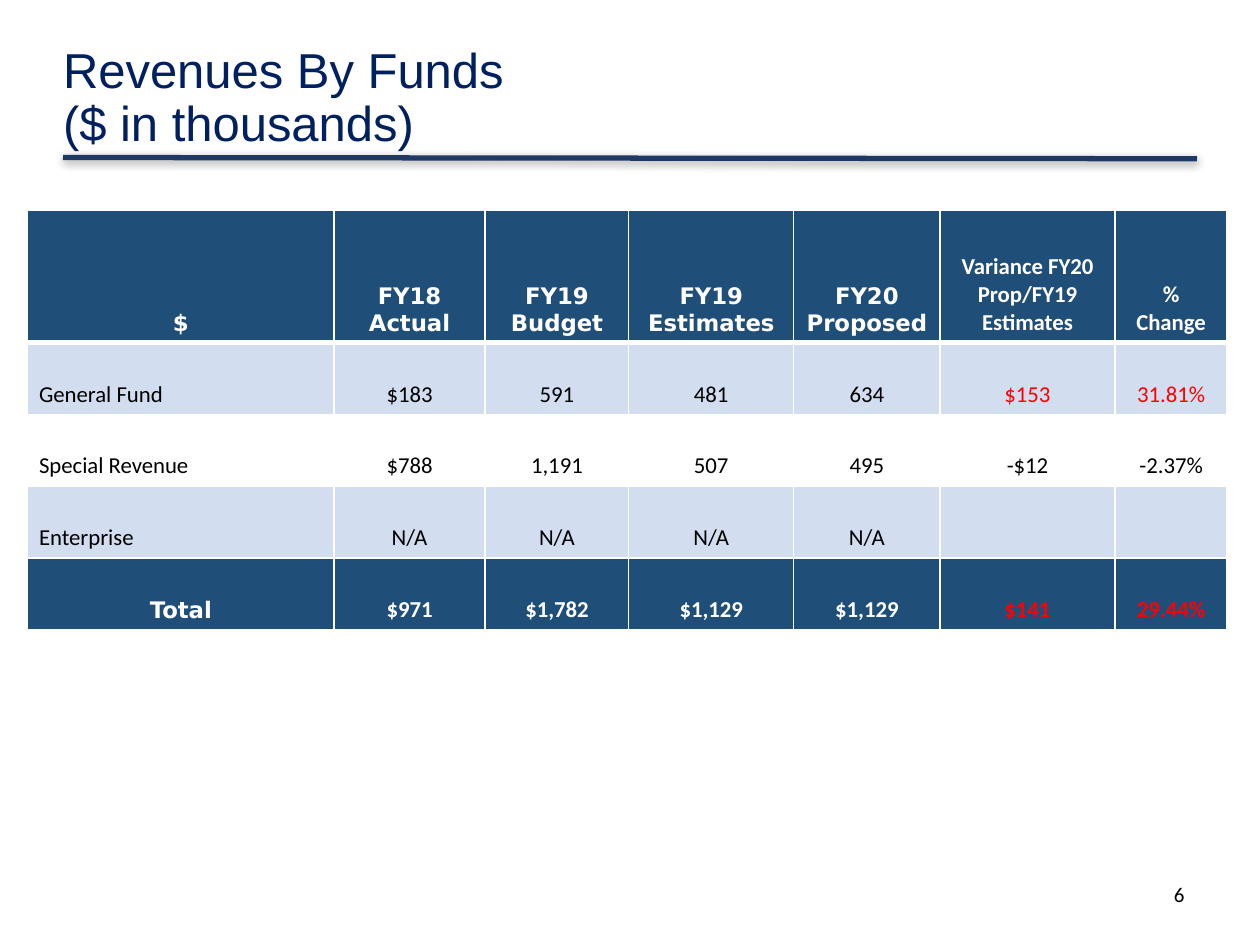
"""Build the slide of revenues by funds."""
from lxml import etree
from pptx import Presentation
from pptx.dml.color import RGBColor
from pptx.enum.shapes import MSO_CONNECTOR
from pptx.enum.text import MSO_ANCHOR, PP_ALIGN
from pptx.oxml import parse_xml
from pptx.oxml.ns import nsdecls, qn
from pptx.util import Inches, Pt

LEFT, CENTER, RIGHT = PP_ALIGN.LEFT, PP_ALIGN.CENTER, PP_ALIGN.RIGHT
MIDDLE, BOTTOM = MSO_ANCHOR.MIDDLE, MSO_ANCHOR.BOTTOM
STRAIGHT = MSO_CONNECTOR.STRAIGHT

COLORS = {"title": "002060", "rule": "203864", "dark": "1F4E79", "pale": "D2DEEF",
          "white": "FFFFFF", "black": "000000", "red": "FF0000"}
SANS, WIDE = "Calibri", "DejaVu Sans"

TITLE = ["Revenues By Funds", "($ in thousands)"]
PAGE = "6"
ROWS = [
    ["$", "FY18\nActual", "FY19\nBudget", "FY19\nEstimates", "FY20\nProposed",
     "Variance FY20 Prop/FY19 Estimates", "%\nChange"],
    ["General Fund", "$183", "591", "481", "634", "$153", "31.81%"],
    ["Special Revenue", "$788", "1,191", "507", "495", "-$12", "-2.37%"],
    ["Enterprise", "N/A", "N/A", "N/A", "N/A", "", ""],
    ["Total", "$971", "$1,782", "$1,129", "$1,129", "$141", "29.44%"],
]
WIDTHS = [2.43, 1.2, 1.14, 1.31, 1.16, 1.39, 0.89]
HEIGHTS = [1.05] + [0.57] * 4
FILLS = ["dark", "pale", None, "pale", "dark"]
LAST = len(ROWS) - 1
RED_ROWS, RED_COLS = (1, LAST), (5, 6)


def tint(name):
    return RGBColor.from_string(COLORS[name])


def add_run(para, text, size, face, color, bold=False):
    run = para.add_run()
    run.text = text
    font = run.font
    font.size, font.name, font.bold = Pt(size), face, bold
    font.color.rgb = tint(color)


def add_edge(cell, side, width):
    cell._tc.get_or_add_tcPr().append(parse_xml(
        f'<a:ln{side} {nsdecls("a")} w="{Pt(width)}"><a:solidFill>'
        f'<a:srgbClr val="{COLORS["white"]}"/></a:solidFill></a:ln{side}>'))


def style_cell(cell, row, col):
    cell.vertical_anchor = BOTTOM
    cell.margin_left = cell.margin_right = Inches(0.09)
    edges = {"L": 1, "R": 1, "T": 3 if row == 1 else 1, "B": 3 if row == 0 else 1}
    for side, width in edges.items():
        add_edge(cell, side, width)
    if FILLS[row]:
        cell.fill.solid()
        cell.fill.fore_color.rgb = tint(FILLS[row])
    else:
        cell.fill.background()


def fill_cell(cell, text, row, col):
    bold = row in (0, LAST)
    color = "white" if bold else "black"
    if row in RED_ROWS and col in RED_COLS:
        color = "red"
    wide = (row == 0 and col < 5) or (row == LAST and col == 0)
    for num, line in enumerate(text.split("\n")):
        frame = cell.text_frame
        para = frame.add_paragraph() if num else frame.paragraphs[0]
        para.alignment = CENTER if bold or col else LEFT
        if line:
            add_run(para, line, 13, WIDE if wide else SANS, color, bold)


def add_title(slide):
    title = slide.shapes.title
    title.left, title.top = Inches(0.5), Inches(0.33)
    title.width, title.height = Inches(6.86), Inches(0.92)
    frame = title.text_frame
    frame.margin_left = frame.margin_right = frame.margin_top = frame.margin_bottom = 0
    frame.vertical_anchor, frame.word_wrap = MIDDLE, True
    para = frame.paragraphs[0]
    para.alignment, para.line_spacing = LEFT, 0.9
    for num, line in enumerate(TITLE):
        if num:
            para.add_line_break()
        add_run(para, line, 28, "Arial", "title")


def add_rule(slide):
    rule = slide.shapes.add_connector(
        STRAIGHT, Inches(0.5), Inches(1.25), Inches(9.5), Inches(1.26))
    rule.line.color.rgb, rule.line.width = tint("rule"), Pt(3)
    glow = etree.SubElement(rule._element.spPr, qn("a:effectLst"))
    glow.append(parse_xml(
        f'<a:outerShdw {nsdecls("a")} blurRad="{Pt(5)}" dist="{Pt(1.6)}" dir="5400000" '
        f'rotWithShape="0"><a:srgbClr val="{COLORS["black"]}"><a:alpha val="38000"/>'
        '</a:srgbClr></a:outerShdw>'))


def add_page(slide):
    box = slide.shapes.add_textbox(Inches(7.17), Inches(6.95), Inches(2.33), Inches(0.4))
    box.text_frame.word_wrap = True
    para = box.text_frame.paragraphs[0]
    para.alignment = RIGHT
    add_run(para, PAGE, 12, SANS, "black")


def add_grid(slide):
    grid = slide.shapes.add_table(
        len(ROWS), len(WIDTHS), Inches(0.22), Inches(1.67),
        Inches(sum(WIDTHS)), Inches(sum(HEIGHTS))).table
    for col, width in enumerate(WIDTHS):
        grid.columns[col].width = Inches(width)
    for row, texts in enumerate(ROWS):
        grid.rows[row].height = Inches(HEIGHTS[row])
        for col, text in enumerate(texts):
            cell = grid.cell(row, col)
            style_cell(cell, row, col)
            fill_cell(cell, text, row, col)


def main():
    deck = Presentation()
    deck.slide_width, deck.slide_height = Inches(10), Inches(7.5)
    slide = deck.slides.add_slide(deck.slide_layouts[5])
    add_rule(slide)
    add_title(slide)
    add_page(slide)
    add_grid(slide)
    deck.save("out.pptx")


if __name__ == "__main__":
    main()
